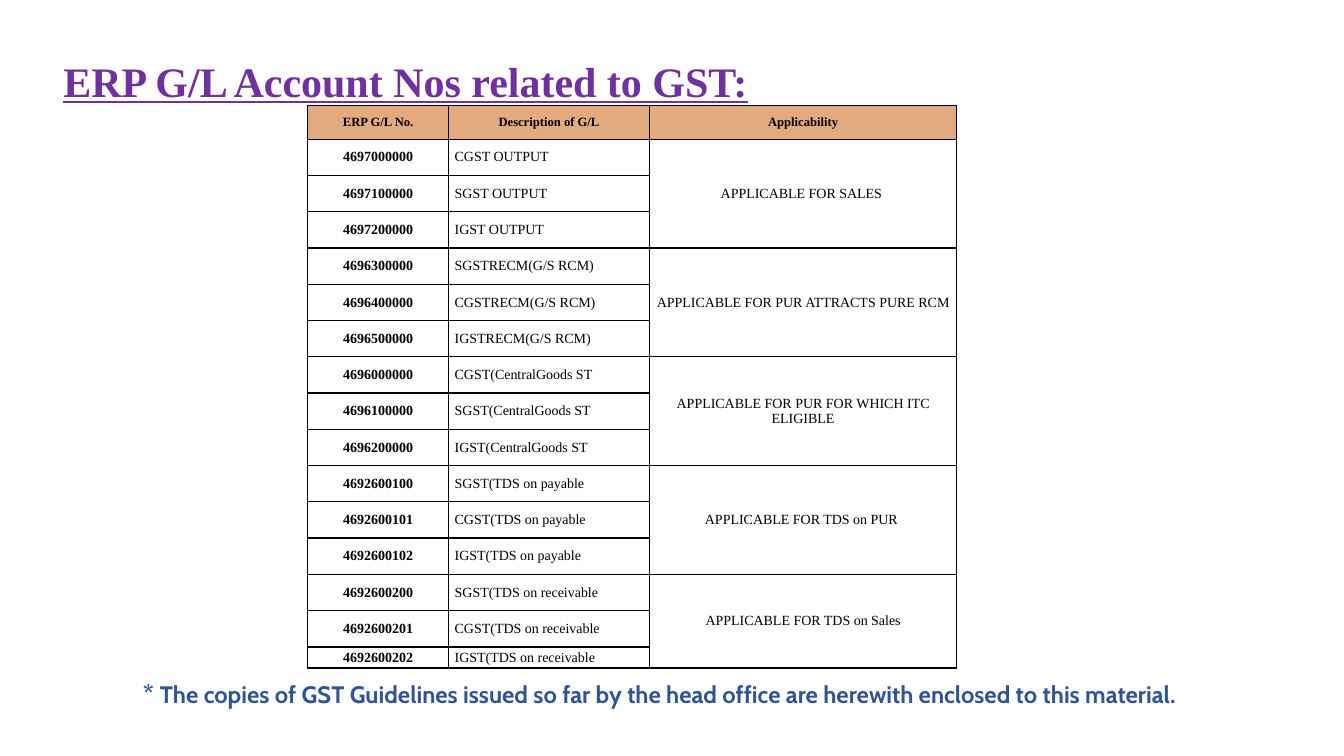
from lxml.etree import SubElement
from pptx import Presentation
from pptx.dml.color import RGBColor
from pptx.enum.text import MSO_ANCHOR as ANCHOR, PP_ALIGN as ALIGN
from pptx.oxml.ns import qn
from pptx.util import Inches, Pt

SERIF = "Times New Roman"
HEADERS = ["ERP G/L No.", "Description of G/L", "Applicability"]
GROUPS = [
    ("APPLICABLE FOR SALES ", [
        ("4697000000", "CGST OUTPUT"),
        ("4697100000", "SGST OUTPUT"),
        ("4697200000", "IGST OUTPUT")]),
    ("APPLICABLE FOR PUR ATTRACTS PURE RCM", [
        ("4696300000", "SGSTRECM(G/S RCM)"),
        ("4696400000", "CGSTRECM(G/S RCM)"),
        ("4696500000", "IGSTRECM(G/S RCM)")]),
    ("APPLICABLE FOR PUR FOR WHICH ITC ELIGIBLE", [
        ("4696000000", "CGST(CentralGoods ST"),
        ("4696100000", "SGST(CentralGoods ST"),
        ("4696200000", "IGST(CentralGoods ST")]),
    ("APPLICABLE FOR TDS on PUR ", [
        ("4692600100", "SGST(TDS on payable"),
        ("4692600101", "CGST(TDS on payable"),
        ("4692600102", "IGST(TDS on payable")]),
    ("APPLICABLE FOR TDS on Sales", [
        ("4692600200", "SGST(TDS on receivable"),
        ("4692600201", "CGST(TDS on receivable"),
        ("4692600202", "IGST(TDS on receivable")]),
]


def rgb(value):
    """Turn a hex string into a colour."""
    return RGBColor.from_string(value)


def write(p, text, size=10, font=SERIF, color="000000", bold=False,
          underline=False, align=ALIGN.LEFT):
    """Add a formatted run to a paragraph."""
    p.alignment = align
    r = p.add_run()
    r.text = text
    r.font.size = Pt(size)
    r.font.name = font
    r.font.bold = bold
    r.font.underline = underline
    r.font.color.rgb = rgb(color)


def add_textbox(s, left, top, width, height):
    """Add a wrapping text box and return its text frame."""
    sp = s.shapes.add_textbox(Inches(left), Inches(top), Inches(width), Inches(height))
    tf = sp.text_frame
    tf.word_wrap = True
    return tf


def style_cell(cell, fill=None):
    """Set the margins, borders and fill of a cell."""
    cell.margin_left = cell.margin_right = Inches(0.06)
    cell.margin_top = cell.margin_bottom = 0
    cell.vertical_anchor = ANCHOR.MIDDLE
    props = cell._tc.get_or_add_tcPr()
    for side in ("lnL", "lnR", "lnT", "lnB"):
        line = SubElement(props, qn(f"a:{side}"), w=str(Pt(1)))
        SubElement(SubElement(line, qn("a:solidFill")), qn("a:srgbClr"), val="000000")
    if fill:
        cell.fill.solid()
        cell.fill.fore_color.rgb = rgb(fill)
    else:
        cell.fill.background()


def add_title(s):
    """Add the underlined slide title."""
    tf = add_textbox(s, 0.53, 0.47, 8.82, 0.91)
    tf.vertical_anchor = ANCHOR.MIDDLE
    tf.margin_bottom = Inches(0.3)
    write(tf.paragraphs[0], "ERP G/L Account Nos related to GST:", size=30,
          color="7030A0", bold=True, underline=True)


def add_accounts_table(s):
    """Add the account table with one merged applicability cell per group."""
    accounts = [account for _, group in GROUPS for account in group]
    heights = [0.33] + [0.36] * (len(accounts) - 1) + [0.21]
    table = s.shapes.add_table(len(heights), len(HEADERS), Inches(3.05), Inches(1.05),
                               Inches(6.44), Inches(5.58)).table
    table.first_row = table.horz_banding = False
    for column, width in zip(table.columns, (1.4, 1.99, 3.05)):
        column.width = Inches(width)
    for i, height in enumerate(heights):
        table.rows[i].height = Inches(height)
        for cell in table.rows[i].cells:
            style_cell(cell, fill=None if i else "E3A97F")
    for col, header in enumerate(HEADERS):
        write(table.cell(0, col).text_frame.paragraphs[0], header, size=9,
              bold=True, align=ALIGN.CENTER)
    for row, (number, description) in enumerate(accounts, 1):
        write(table.cell(row, 0).text_frame.paragraphs[0], number, bold=True,
              align=ALIGN.CENTER)
        write(table.cell(row, 1).text_frame.paragraphs[0], description)
    row = 1
    for applicability, group in GROUPS:
        cell = table.cell(row, 2)
        cell.merge(table.cell(row + len(group) - 1, 2))
        write(cell.text_frame.paragraphs[0], applicability, align=ALIGN.CENTER)
        row += len(group)


def add_note(s):
    """Add the closing note below the table."""
    p = add_textbox(s, 1.32, 6.53, 11.56, 0.5).paragraphs[0]
    p.line_spacing = 1.5
    p.space_after = Pt(6)
    look = dict(font="Cabin", color="2F5496", bold=True, align=ALIGN.JUSTIFY)
    write(p, "* ", size=18, **look)
    write(p, "The copies of GST Guidelines issued so far by the head office "
             "are herewith enclosed to this material.", size=17, **look)


def main():
    """Build the slide and save it."""
    prs = Presentation()
    prs.slide_width, prs.slide_height = Inches(13.33), Inches(7.5)
    s = prs.slides.add_slide(prs.slide_layouts[6])
    add_accounts_table(s)
    add_title(s)
    add_note(s)
    prs.save("out.pptx")


if __name__ == "__main__":
    main()
